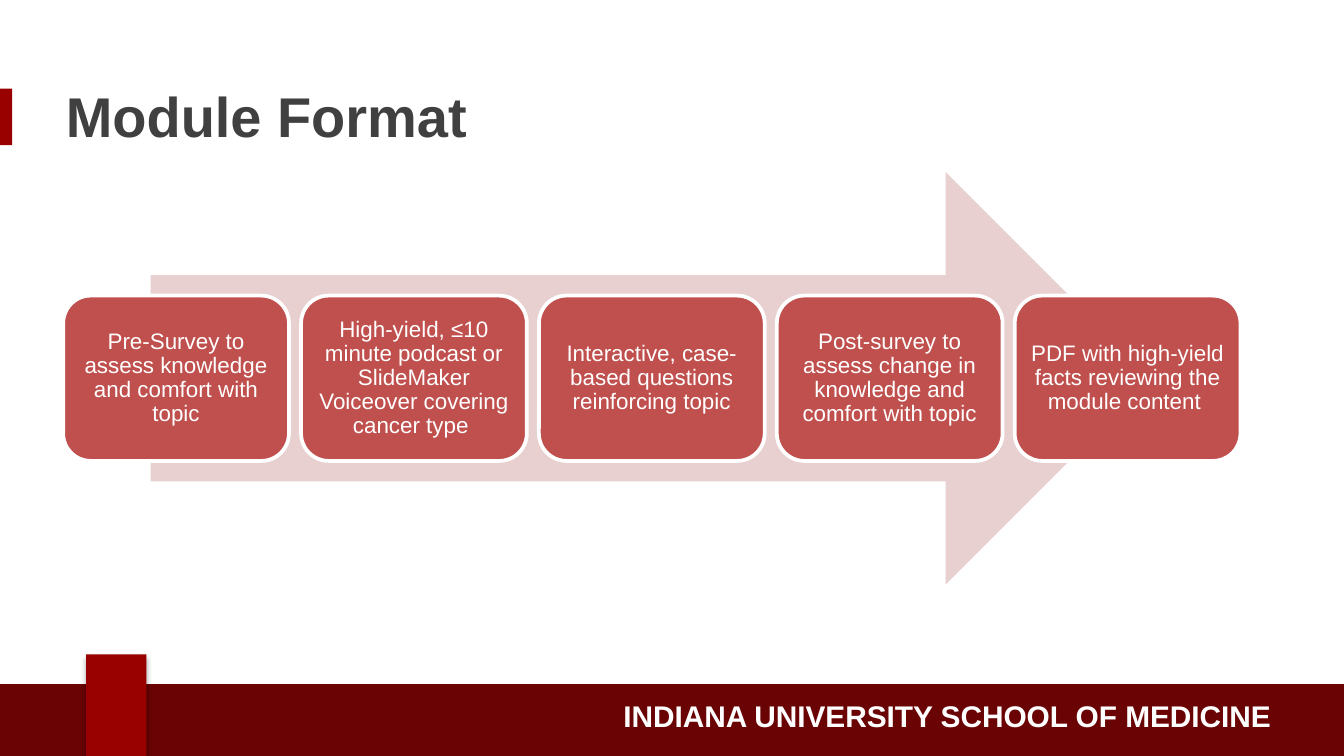
from lxml import etree
from pptx import Presentation
from pptx.dml.color import RGBColor
from pptx.enum.shapes import MSO_SHAPE as Shape
from pptx.enum.text import MSO_ANCHOR as Anchor, PP_ALIGN as Align
from pptx.oxml.ns import qn
from pptx.util import Inches, Pt

TITLE = "Module Format"
SCHOOL = "INDIANA UNIVERSITY SCHOOL OF MEDICINE"
STEPS = [
    "Pre-Survey to assess knowledge and comfort with topic",
    "High-yield, ≤10 minute podcast or SlideMaker Voiceover covering cancer type\u00a0",
    "Interactive, case-based questions reinforcing topic",
    "Post-survey to assess change in knowledge and comfort with topic",
    "PDF with high-yield facts reviewing the module content\u00a0",
]

FONT = "Arial"
CRIMSON, MAROON, STEP_RED, PALE_RED = "990000", "690304", "C0504D", "E8D0D0"
WHITE, CHARCOAL = "FFFFFF", "404041"

SLIDE_W = 10
SLIDE_H = SLIDE_W * 9 / 16
FOOTER_TOP, TAB_TOP = 5.09, 4.87
STEP_LEFT, STEP_W, STEP_H, STEP_PITCH = 0.47, 1.68, 1.23, 1.77
ARROW_TOP, ARROW_H = 1.28, 3.07
STEP_TOP = ARROW_TOP + (ARROW_H - STEP_H) / 2


def rgb(color):
    return RGBColor.from_string(color)


def add_block(slide, preset, left, top, width, height, color):
    block = slide.shapes.add_shape(
        preset, Inches(left), Inches(top), Inches(width), Inches(height))
    block.shadow.inherit = False
    block.fill.solid()
    block.fill.fore_color.rgb = rgb(color)
    block.line.fill.background()
    return block


def write(frame, text, size, color, align, anchor, bold=False):
    frame.word_wrap = True
    frame.vertical_anchor = anchor
    paragraph = frame.paragraphs[0]
    paragraph.alignment = align
    run = paragraph.add_run()
    run.text = text
    run.font.name, run.font.size, run.font.bold = FONT, Pt(size), bold
    run.font.color.rgb = rgb(color)
    return paragraph


def cast_shadow(block):
    """Give the block a soft shadow that falls straight down."""
    effects = block._element.spPr.find(qn("a:effectLst"))
    shadow = etree.SubElement(
        effects, qn("a:outerShdw"), blurRad=str(Pt(3.1)), dist=str(Pt(1.8)),
        dir="5400000", rotWithShape="0")
    tint = etree.SubElement(shadow, qn("a:srgbClr"), val="000000")
    etree.SubElement(tint, qn("a:alpha"), val="35000")


def add_frame(slide):
    add_block(slide, Shape.RECTANGLE, 0, 0.66, 0.09, 0.42, CRIMSON)
    add_block(slide, Shape.RECTANGLE, 0, FOOTER_TOP, SLIDE_W,
              SLIDE_H - FOOTER_TOP, MAROON)
    school = slide.shapes.add_textbox(
        Inches(2.82), Inches(5.14), Inches(6.74), Inches(0.37))
    write(school.text_frame, SCHOOL, 16, WHITE, Align.RIGHT, Anchor.MIDDLE, True)
    tab = add_block(slide, Shape.RECTANGLE, 0.64, TAB_TOP, 0.45,
                    SLIDE_H - TAB_TOP, CRIMSON)
    cast_shadow(tab)


def add_title(slide):
    title = slide.shapes.title
    title.left, title.top = Inches(0.39), Inches(0.56)
    title.width, title.height = Inches(8.75), Inches(0.76)
    write(title.text_frame, TITLE, 30, CHARCOAL, Align.LEFT, Anchor.TOP, True)


def add_process(slide):
    add_block(slide, Shape.RIGHT_ARROW, 1.12, ARROW_TOP, 7.45, ARROW_H, PALE_RED)
    for column, step in enumerate(STEPS):
        card = add_block(slide, Shape.ROUNDED_RECTANGLE,
                         STEP_LEFT + column * STEP_PITCH, STEP_TOP,
                         STEP_W, STEP_H, STEP_RED)
        card.line.color.rgb = rgb(WHITE)
        card.line.width = Pt(2)
        frame = card.text_frame
        frame.margin_left = frame.margin_right = Inches(0.05)
        frame.margin_top = frame.margin_bottom = Inches(0.05)
        paragraph = write(frame, step, 12, WHITE, Align.CENTER, Anchor.MIDDLE)
        paragraph.line_spacing = 0.9


def main():
    deck = Presentation()
    deck.slide_width, deck.slide_height = Inches(SLIDE_W), Inches(SLIDE_H)
    slide = deck.slides.add_slide(deck.slide_layouts.get_by_name("Title Only"))
    add_frame(slide)
    add_title(slide)
    add_process(slide)
    deck.save("out.pptx")


if __name__ == "__main__":
    main()
